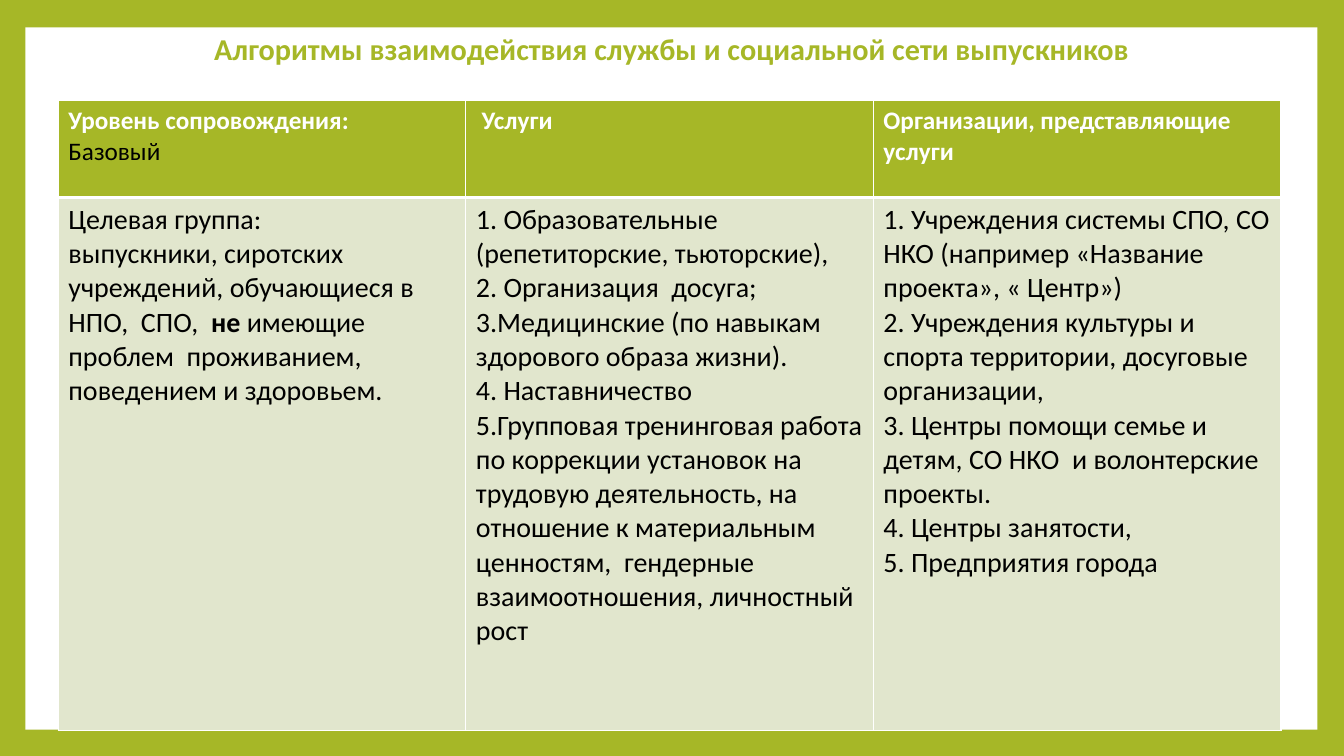
from lxml.etree import SubElement
from pptx import Presentation
from pptx.dml.color import RGBColor
from pptx.enum.shapes import MSO_SHAPE
from pptx.enum.text import MSO_ANCHOR, PP_ALIGN
from pptx.oxml.ns import qn
from pptx.util import Cm, Pt

GREEN = RGBColor(0xA6, 0xB7, 0x27)
PALE_GREEN = RGBColor(0xE1, 0xE6, 0xCD)
WHITE = RGBColor(0xFF, 0xFF, 0xFF)
BLACK = RGBColor(0x00, 0x00, 0x00)
FONT = "Calibri"

# Content: each cell is a list of paragraphs, each paragraph a list of (text, bold, colour)
TITLE = "Алгоритмы взаимодействия службы и социальной сети выпускников"
HEADER = [
    [[("Уровень сопровождения:", True, WHITE)], [("Базовый", False, BLACK)]],
    [[(" Услуги", True, WHITE)]],
    [[("Организации, представляющие услуги", True, WHITE)]],
]
TARGET_GROUP = [
    [("Целевая группа:", False, BLACK)],
    [
        ("выпускники, сиротских учреждений, обучающиеся в  НПО,  СПО,  ", False, BLACK),
        ("не", True, BLACK),
        (" имеющие проблем  проживанием, поведением и здоровьем.", False, BLACK),
    ],
]
SERVICES = [
    "1. Образовательные",
    "(репетиторские, тьюторские),",
    "2. Организация  досуга;",
    "3.Медицинские (по навыкам здорового образа жизни).",
    "4. Наставничество",
    "5.Групповая тренинговая работа по коррекции установок на трудовую деятельность, "
    "на отношение к материальным ценностям,  гендерные взаимоотношения, личностный рост",
]
ORGANIZATIONS = [
    "1. Учреждения системы СПО, СО НКО (например «Название проекта», « Центр»)",
    "2. Учреждения культуры и спорта территории, досуговые организации,",
    "3. Центры помощи семье и детям, СО НКО  и волонтерские проекты.",
    "4. Центры занятости,",
    "5. Предприятия города",
]


def plain(lines):
    return [[(line, False, BLACK)] for line in lines]


BODY = [TARGET_GROUP, plain(SERVICES), plain(ORGANIZATIONS)]

# Rows: cells, height, text size, fill, bottom border width
ROWS = [
    (HEADER, Cm(2.44), Pt(18), GREEN, 3),
    (BODY, Cm(13.43), Pt(20), PALE_GREEN, 1),
]
COLUMN_WIDTH = Cm(10.27)


def add_span(para, text, size, bold, color):
    span = para.add_run()
    span.text = text
    span.font.name = FONT
    span.font.size = size
    span.font.bold = bold
    span.font.color.rgb = color


def set_borders(cell, bottom_width):
    properties = cell._tc.get_or_add_tcPr()
    widths = {"a:lnL": 1, "a:lnR": 1, "a:lnT": 1, "a:lnB": bottom_width}
    for tag, width in widths.items():
        line = SubElement(properties, qn(tag), w=str(Pt(width)))
        fill = SubElement(line, qn("a:solidFill"))
        SubElement(fill, qn("a:srgbClr"), val=str(WHITE))


# Slide with a green frame around a white panel
deck = Presentation()
deck.slide_width, deck.slide_height = Cm(33.87), Cm(19.05)
page = deck.slides.add_slide(deck.slide_layouts[6])
page.background.fill.solid()
page.background.fill.fore_color.rgb = GREEN

panel = page.shapes.add_shape(MSO_SHAPE.RECTANGLE, Cm(0.64), Cm(0.69), Cm(32.56), Cm(17.7))
panel.shadow.inherit = False
panel.fill.solid()
panel.fill.fore_color.rgb = WHITE
panel.line.fill.background()

# Title
title_box = page.shapes.add_textbox(Cm(4.65), Cm(0), Cm(24.56), Cm(2.54))
title_box.text_frame.word_wrap = True
title_box.text_frame.vertical_anchor = MSO_ANCHOR.MIDDLE
title_para = title_box.text_frame.paragraphs[0]
title_para.alignment = PP_ALIGN.CENTER
title_para.line_spacing = 0.9
add_span(title_para, TITLE, Pt(21.6), True, GREEN)

# Table
table = page.shapes.add_table(
    len(ROWS), len(HEADER), Cm(1.47), Cm(2.54),
    COLUMN_WIDTH * len(HEADER), sum(row[1] for row in ROWS),
).table
for column in table.columns:
    column.width = COLUMN_WIDTH

for row_index, (contents, height, size, color, bottom_width) in enumerate(ROWS):
    table.rows[row_index].height = height
    for column_index, paragraphs in enumerate(contents):
        cell = table.cell(row_index, column_index)
        set_borders(cell, bottom_width)
        cell.fill.solid()
        cell.fill.fore_color.rgb = color
        frame = cell.text_frame
        for index, spans in enumerate(paragraphs):
            para = frame.add_paragraph() if index else frame.paragraphs[0]
            for text, bold, text_color in spans:
                add_span(para, text, size, bold, text_color)

deck.save("out.pptx")
